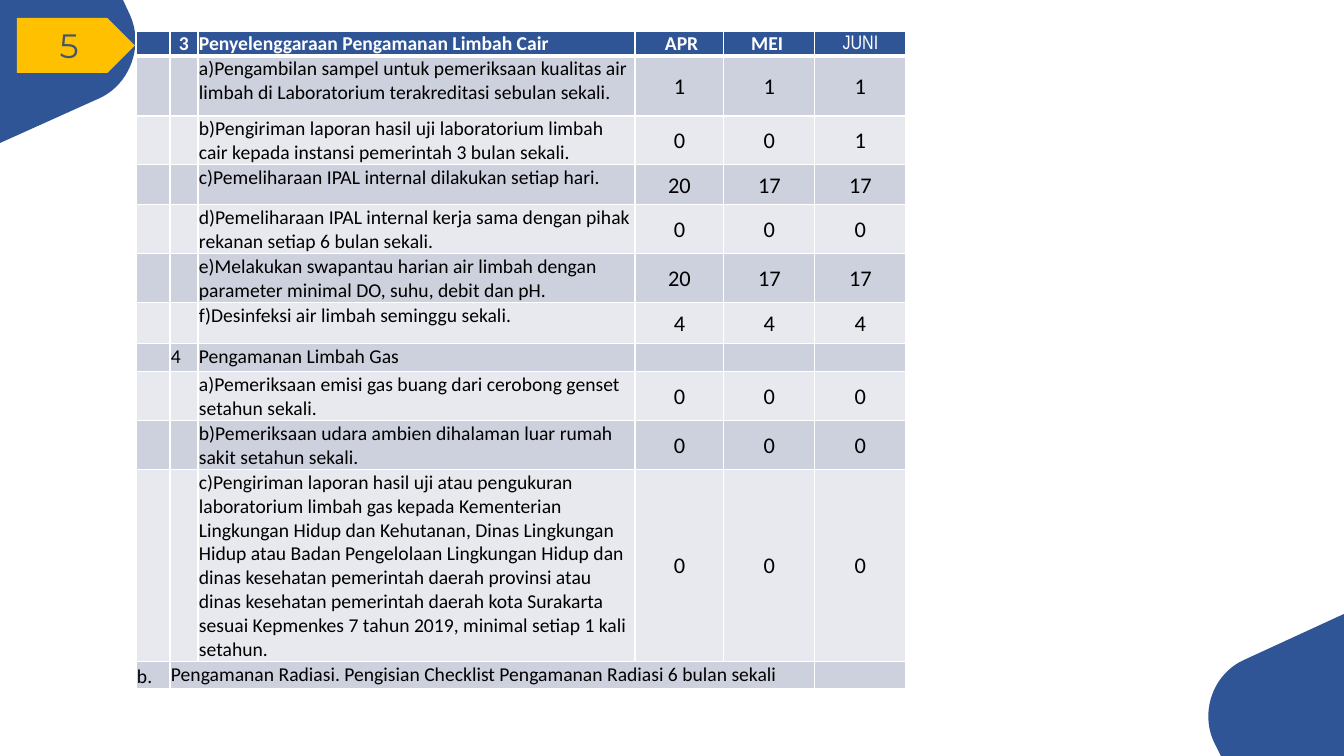
from lxml.etree import SubElement
from pptx import Presentation
from pptx.dml.color import RGBColor
from pptx.enum.shapes import MSO_SHAPE as SHAPE
from pptx.enum.text import MSO_ANCHOR as ANCHOR, PP_ALIGN as ALIGN
from pptx.oxml import parse_xml
from pptx.oxml.ns import nsdecls, qn
from pptx.util import Pt

SCALE = 12192000 / 1344  # EMU per px
BLUE, AMBER, SLATE = "2F5597", "FFC000", "44546A"
DARK_BAND, LIGHT_BAND, WHITE, BLACK = "CDD1DD", "E8E9EF", "FFFFFF", "000000"


def px(n):
    return round(n * SCALE)


def paint(fill, color):
    fill.solid()
    fill.fore_color.rgb = RGBColor.from_string(color)


prs = Presentation()
prs.slide_width, prs.slide_height = px(1344), px(756)
s = prs.slides.add_slide(prs.slide_layouts[6])

# Rounded blue corners: start, curve (four Bezier points), end
corners = [
    ([(1344, 756), (1221, 756)],
     [(1214, 742), (1200, 712), (1213, 674), (1244, 660)], (1344, 614)),
    ([(0, 0), (123, 0)],
     [(130, 15), (144, 46), (130, 84), (100, 98)], (0, 143)),
]
for start, curve, end in corners:
    points = list(start)
    for i in range(21):
        t = i / 20
        weights = ((1 - t) ** 3, 3 * t * (1 - t) ** 2, 3 * t * t * (1 - t), t ** 3)
        points.append(tuple(sum(w * c[axis] for w, c in zip(weights, curve))
                            for axis in (0, 1)))
    points.append(end)
    points = [(px(x), px(y)) for x, y in points]
    fb = s.shapes.build_freeform(*points[0])
    fb.add_line_segments(points[1:], close=True)
    sp = fb.convert_to_shape()
    sp.shadow.inherit = False
    paint(sp.fill, BLUE)
    sp.line.fill.background()

# Page number tag
sp = s.shapes.add_shape(SHAPE.PENTAGON, px(17), px(18), px(118), px(55))
sp.shadow.inherit = False
paint(sp.fill, AMBER)
sp.line.fill.background()
tf = sp.text_frame
tf.vertical_anchor = ANCHOR.MIDDLE
p = tf.paragraphs[0]
p.alignment = ALIGN.CENTER
r = p.add_run()
r.text = "5"
r.font.name, r.font.size = "Montserrat", Pt(24.1)
paint(r.font.fill, SLATE)

# Table content: section letter, number, activity, April, May, June
rows = [
    ("", "3", "Penyelenggaraan Pengamanan Limbah Cair", " APR", "MEI ", "JUNI"),
    ("", "", "a)Pengambilan sampel untuk pemeriksaan kualitas air limbah di "
     "Laboratorium terakreditasi sebulan sekali.", "1", "1", "1"),
    ("", "", "b)Pengiriman laporan hasil uji laboratorium limbah cair kepada "
     "instansi pemerintah 3 bulan sekali.", "0", "0", "1"),
    ("", "", "c)Pemeliharaan IPAL internal dilakukan setiap hari.", "20", "17", "17"),
    ("", "", "d)Pemeliharaan IPAL internal kerja sama dengan pihak rekanan "
     "setiap 6 bulan sekali.", "0", "0", "0"),
    ("", "", "e)Melakukan swapantau harian air limbah dengan parameter minimal "
     "DO, suhu, debit dan pH.", "20", "17", "17"),
    ("", "", "f)Desinfeksi air limbah seminggu sekali.", "4", "4", "4"),
    ("", "4", "Pengamanan Limbah Gas", "", "", ""),
    ("", "", "a)Pemeriksaan emisi gas buang dari cerobong genset setahun sekali.",
     "0", "0", "0"),
    ("", "", "b)Pemeriksaan udara ambien dihalaman luar rumah sakit setahun sekali.",
     "0", "0", "0"),
    ("", "", "c)Pengiriman laporan hasil uji atau pengukuran laboratorium limbah gas "
     "kepada Kementerian Lingkungan Hidup dan Kehutanan, Dinas Lingkungan Hidup atau "
     "Badan Pengelolaan Lingkungan Hidup dan dinas kesehatan pemerintah daerah "
     "provinsi atau dinas kesehatan pemerintah daerah kota Surakarta sesuai "
     "Kepmenkes 7 tahun 2019, minimal setiap 1 kali setahun.", "0", "0", "0"),
    ("b.", "Pengamanan Radiasi. Pengisian Checklist Pengamanan Radiasi "
     "6 bulan sekali", "", "", "", ""),
]
col_widths = [34, 28, 437, 89, 91, 91]
row_heights = [25, 60, 49, 40, 49, 49, 41, 28, 49, 49, 191, 27]

table = s.shapes.add_table(len(rows), len(col_widths), px(136), px(31),
                           px(sum(col_widths)), px(sum(row_heights))).table
table.horz_banding = False
for col, width in zip(table.columns, col_widths):
    col.width = px(width)
for row, height in zip(table.rows, row_heights):
    row.height = px(height)
last = len(rows) - 1
table.cell(last, 1).merge(table.cell(last, 4))

for i, row in enumerate(rows):
    header = i == 0
    band = BLUE if header else DARK_BAND if i % 2 else LIGHT_BAND
    for j, text in enumerate(row):
        cell = table.cell(i, j)
        value = j > 2
        anchor = ANCHOR.MIDDLE if value else ANCHOR.BOTTOM if text == "b." else ANCHOR.TOP
        cell_format = {"margin_left": px(1), "margin_top": px(1), "margin_right": px(1),
                       "margin_bottom": 0, "vertical_anchor": anchor}
        for name, setting in cell_format.items():
            setattr(cell, name, setting)
        paint(cell.fill, band)

        # White borders, heavier under the header
        tcPr = cell._tc.get_or_add_tcPr()
        for k, side in enumerate("LRTB"):
            heavy = (i, side) in ((0, "B"), (1, "T"))
            ln = parse_xml(f'<a:ln{side} {nsdecls("a")} w="{Pt(3 if heavy else 1)}"/>')
            solid = SubElement(ln, qn("a:solidFill"))
            SubElement(solid, qn("a:srgbClr"), val=WHITE)
            tcPr.insert(k, ln)

        # Text; empty cells keep a small line height
        p = cell.text_frame.paragraphs[0]
        if not text:
            SubElement(p._p, qn("a:endParaRPr"), sz="1400")
            continue
        p.alignment = ALIGN.CENTER if value or text == "3" else ALIGN.LEFT
        r = p.add_run()
        r.text = text
        june = text == "JUNI"
        font_format = {"name": "Arial Narrow" if june else "Calibri",
                       "size": Pt(16 if value and not header else 14),
                       "bold": header and not june}
        for name, setting in font_format.items():
            setattr(r.font, name, setting)
        paint(r.font.fill, WHITE if header else BLACK)

prs.save("out.pptx")
